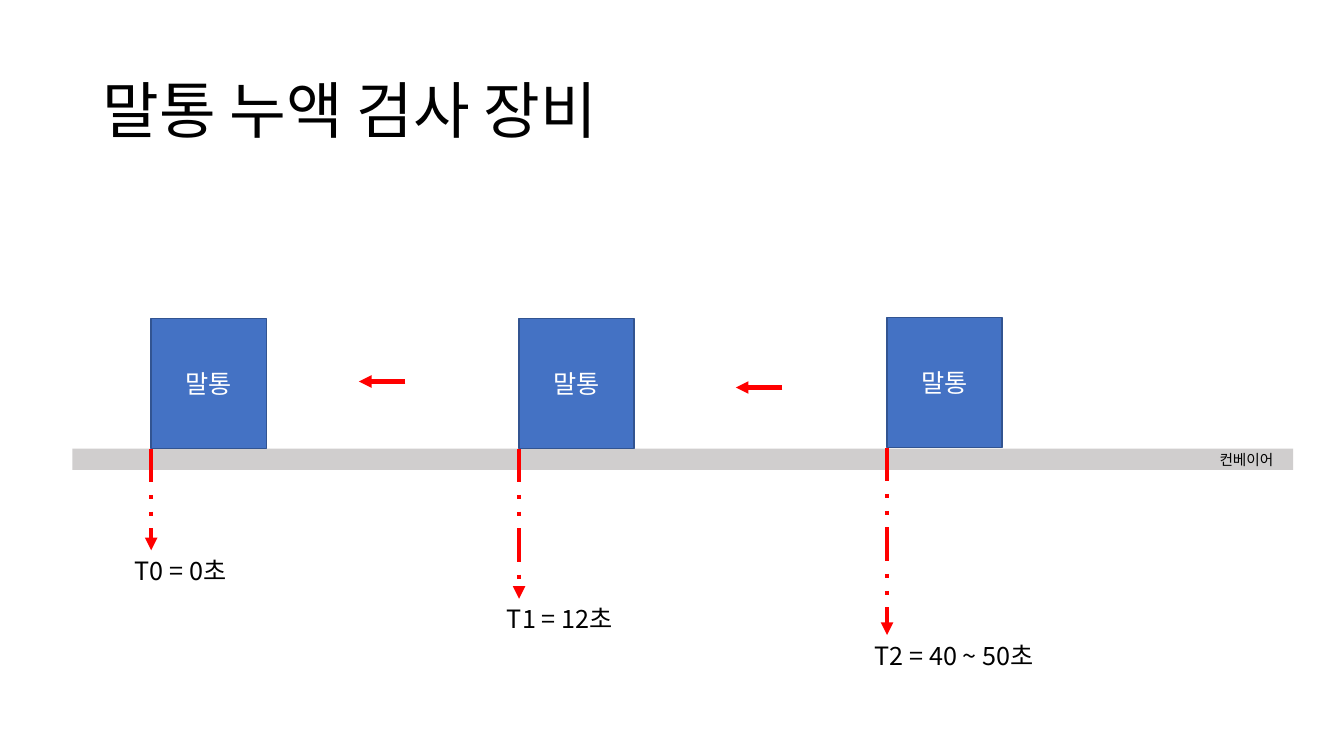
import pptx
import pptx.util
import pptx.dml.color
import pptx.enum.shapes
import pptx.enum.text
import pptx.enum.dml
import pptx.oxml.ns
import lxml.etree

Pt = pptx.util.Pt
FONT = "Noto Sans CJK KR"
HUES = {"ink": "000000", "paper": "FFFFFF", "belt": "D0CECE",
        "drum": "4472C4", "edge": "325491", "arrow": "FF0000"}
HUES = {name: pptx.dml.color.RGBColor.from_string(hue) for name, hue in HUES.items()}


def write(frame, words, size, hue):
    run = frame.paragraphs[0].add_run()
    run.text = words
    run.font.size = Pt(size)
    run.font.name = FONT
    run.font.color.rgb = HUES[hue]
    # East Asian typeface follows the Latin one
    east = lxml.etree.SubElement(run.font._element, pptx.oxml.ns.qn("a:ea"))
    east.set("typeface", FONT)


def arrow(x1, y1, x2, y2, dash=None):
    line = slide.shapes.add_connector(
        pptx.enum.shapes.MSO_CONNECTOR.STRAIGHT, Pt(x1), Pt(y1), Pt(x2), Pt(y2))
    line.line.color.rgb = HUES["arrow"]
    line.line.width = Pt(3)
    if dash:
        line.line.dash_style = dash
    tail = lxml.etree.SubElement(line.line._get_or_add_ln(), pptx.oxml.ns.qn("a:tailEnd"))
    tail.set("type", "triangle")
    lxml.etree.SubElement(line._element.spPr, pptx.oxml.ns.qn("a:effectLst"))


deck = pptx.Presentation()
deck.slide_width, deck.slide_height = Pt(960), Pt(540)
slide = deck.slides.add_slide(deck.slide_layouts[5])

# Title
title = slide.shapes.title
title.left, title.top, title.width, title.height = Pt(66), Pt(28.75), Pt(828), Pt(104.4)
title.text_frame.vertical_anchor = pptx.enum.text.MSO_ANCHOR.MIDDLE
title.text_frame.paragraphs[0].alignment = pptx.enum.text.PP_ALIGN.LEFT
title.text_frame.paragraphs[0].line_spacing = 0.9
write(title.text_frame, "말통 누액 검사 장비", 44, "ink")

# Conveyor belt
rect = pptx.enum.shapes.MSO_SHAPE.RECTANGLE
belt = slide.shapes.add_shape(rect, Pt(51.8), Pt(320.4), Pt(872), Pt(15.2))
belt.shadow.inherit = False
belt.fill.solid()
belt.fill.fore_color.rgb = HUES["belt"]
belt.line.fill.background()
label = slide.shapes.add_textbox(Pt(864), Pt(318.2), Pt(192), Pt(20))
label.text_frame.word_wrap = True
write(label.text_frame, "컨베이어", 10.5, "ink")

# Drums, each with a dashed pointer down to its time
stops = [("T0 = 0초", 227.5, 393.1, 89.3, 88),
         ("T1 = 12초", 227.5, 427.7, 355, 98),
         ("T2 = 40 ~ 50초", 226.8, 453.6, 617.8, 143)]
for i, (words, top, end, left, width) in enumerate(stops):
    x = 108 + 262.8 * i
    drum = slide.shapes.add_shape(rect, Pt(x), Pt(top), Pt(82.2), Pt(92.9))
    drum.shadow.inherit = False
    drum.fill.solid()
    drum.fill.fore_color.rgb = HUES["drum"]
    drum.line.color.rgb = HUES["edge"]
    drum.line.width = Pt(1)
    drum.text_frame.vertical_anchor = pptx.enum.text.MSO_ANCHOR.MIDDLE
    drum.text_frame.paragraphs[0].alignment = pptx.enum.text.PP_ALIGN.CENTER
    write(drum.text_frame, "말통", 18, "paper")
    arrow(x, top + 92.9, x, end, pptx.enum.dml.MSO_LINE.DASH_DOT_DOT)
    time = slide.shapes.add_textbox(Pt(left), Pt(end), Pt(width), Pt(29))
    time.text_frame.word_wrap = False
    write(time.text_frame, words, 18, "ink")

# Direction of travel
for x, y in [(289.6, 272.5), (558.8, 276.8)]:
    arrow(x, y, x - 33.2, y)

deck.save("out.pptx")
